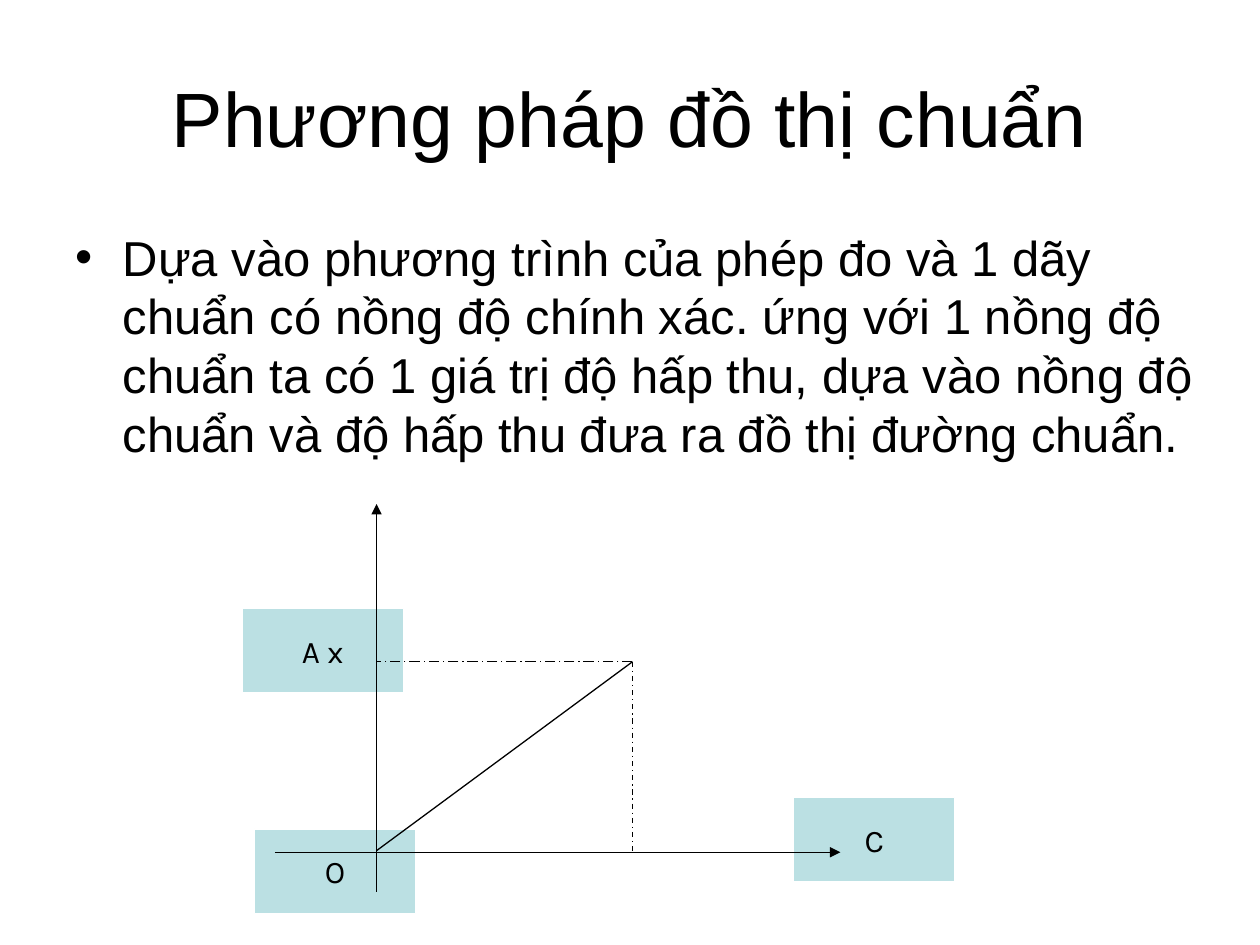
from lxml.etree import SubElement
from pptx import Presentation
from pptx.dml.color import RGBColor
from pptx.enum.dml import MSO_LINE
from pptx.enum.shapes import MSO_CONNECTOR, MSO_SHAPE
from pptx.enum.text import MSO_ANCHOR, MSO_AUTO_SIZE, PP_ALIGN
from pptx.oxml.ns import qn
from pptx.util import Cm, Pt

BLACK = RGBColor(0x00, 0x00, 0x00)
WHITE = RGBColor(0xFF, 0xFF, 0xFF)
PALE_TEAL = RGBColor(0xBB, 0xE0, 0xE3)


def write_text(frame, text, *, size, font="Arial", align=PP_ALIGN.LEFT,
               anchor=MSO_ANCHOR.TOP, wrap=True):
    frame.auto_size = MSO_AUTO_SIZE.NONE
    frame.word_wrap = wrap
    frame.vertical_anchor = anchor
    paragraph = frame.paragraphs[0]
    paragraph.alignment = align
    run = paragraph.add_run()
    run.text = text
    run.font.name = font
    run.font.size = Pt(size)
    run.font.color.rgb = BLACK


class GraphSlide:
    label_font = "Karla"
    label_size = (Cm(3.25), Cm(1.7))
    line_width = Pt(0.75)

    def __init__(self, presentation):
        self.slide = presentation.slides.add_slide(presentation.slide_layouts[1])
        self.graph = None

    def placeholder(self, index, text, left, top, width, height, **text_format):
        holder = self.slide.placeholders[index]
        holder.left, holder.top = Cm(left), Cm(top)
        holder.width, holder.height = Cm(width), Cm(height)
        write_text(holder.text_frame, text, **text_format)

    def start_graph(self):
        self.graph = self.slide.shapes.add_group_shape()

    def label(self, text, left, top):
        box = self.graph.shapes.add_shape(
            MSO_SHAPE.RECTANGLE, Cm(left), Cm(top), *self.label_size)
        box.shadow.inherit = False
        box.fill.solid()
        box.fill.fore_color.rgb = PALE_TEAL
        box.line.color.rgb = WHITE
        box.line.width = self.line_width
        write_text(box.text_frame, text, size=18, font=self.label_font,
                   align=PP_ALIGN.CENTER, anchor=MSO_ANCHOR.MIDDLE, wrap=False)

    def line(self, start, end, dash=None, arrow=False):
        stroke = self.graph.shapes.add_connector(
            MSO_CONNECTOR.STRAIGHT, *map(Cm, start), *map(Cm, end))
        stroke.line.color.rgb = BLACK
        stroke.line.width = self.line_width
        if dash:
            stroke.line.dash_style = dash
        if arrow:
            SubElement(stroke.line._get_or_add_ln(), qn("a:tailEnd"), type="triangle")
        SubElement(stroke._element.spPr, qn("a:effectLst"))


def main():
    presentation = Presentation()
    presentation.slide_width, presentation.slide_height = Cm(25.4), Cm(19.05)
    page = GraphSlide(presentation)

    # Title and explanation
    page.placeholder(0, "Phương pháp đồ thị chuẩn", 1.27, 0.76, 22.86, 3.18,
                     size=44, align=PP_ALIGN.CENTER, anchor=MSO_ANCHOR.MIDDLE)
    page.placeholder(
        1,
        "Dựa vào phương trình của phép đo và 1 dãy chuẩn có nồng độ chính xác. "
        "ứng với 1 nồng độ chuẩn ta có 1 giá trị độ hấp thu, dựa vào nồng độ "
        "chuẩn và độ hấp thu đưa ra đồ thị đường chuẩn.",
        1.27, 4.45, 23.5, 12.57, size=28)

    # Labels behind the graph
    page.start_graph()
    for text, left, top in (("O", 5.13, 16.71), ("A x", 4.88, 12.27), ("C", 16, 16.08)):
        page.label(text, left, top)

    # Axes
    origin_x, origin_y = 7.59, 17.15
    sample_x, sample_y = 12.75, 13.34
    axis_y = 17.18
    page.line((5.54, axis_y), (16.94, axis_y), arrow=True)
    page.line((origin_x, 17.98), (origin_x, 10.16), arrow=True)

    # Calibration line and its projections on the axes
    sample = (sample_x, sample_y)
    page.line((origin_x, origin_y), sample)
    page.line(sample, (sample_x, origin_y), dash=MSO_LINE.DASH_DOT)
    page.line(sample, (origin_x, sample_y), dash=MSO_LINE.LONG_DASH_DOT)

    presentation.save("out.pptx")


if __name__ == "__main__":
    main()
